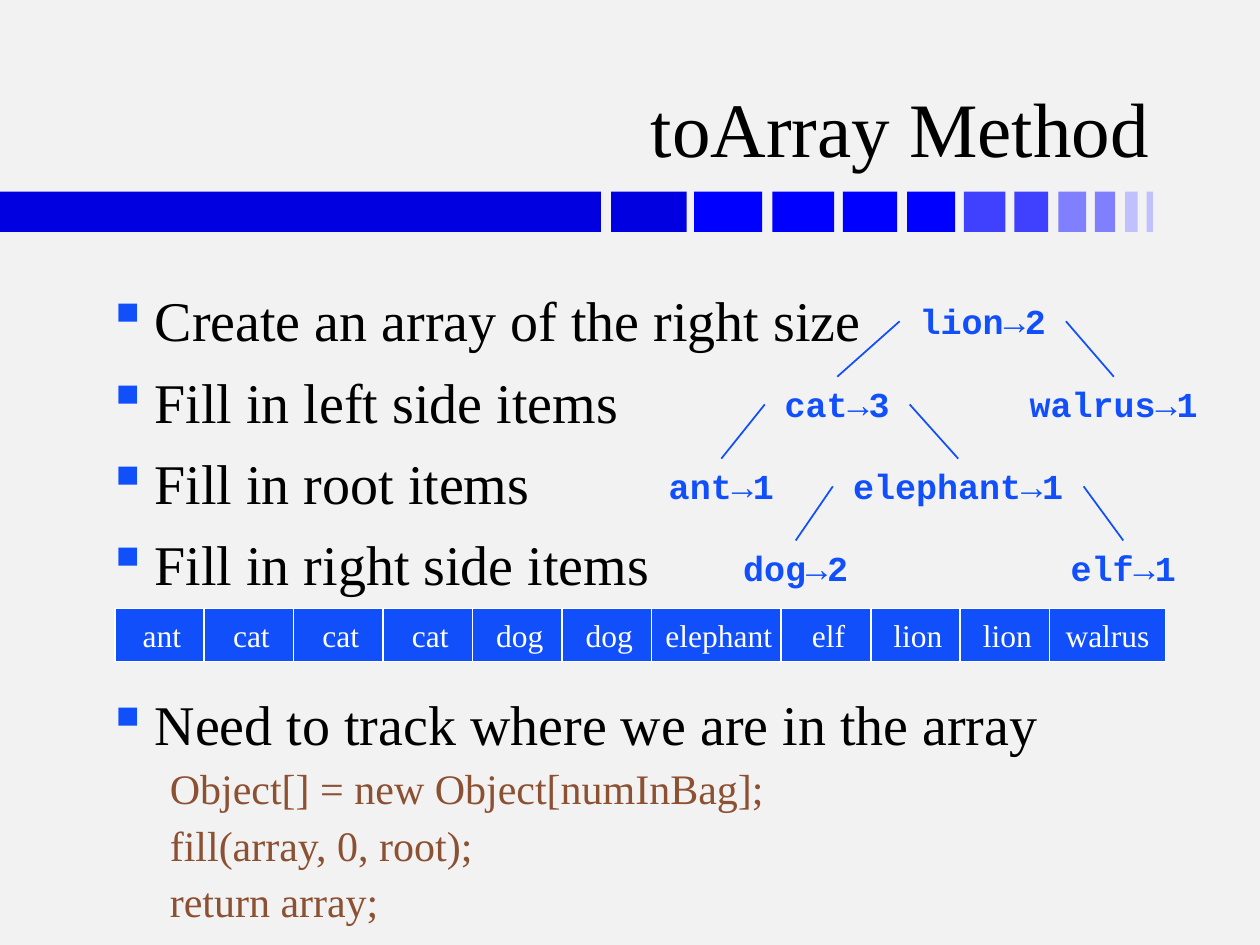
from lxml.etree import SubElement
from pptx import Presentation
from pptx.dml.color import RGBColor
from pptx.enum.shapes import MSO_CONNECTOR, MSO_SHAPE
from pptx.enum.text import MSO_ANCHOR, MSO_AUTO_SIZE, PP_ALIGN
from pptx.oxml.ns import qn
from pptx.util import Inches, Pt

THEME = {
    "background": RGBColor.from_string("F2F2F2"),
    "accent": RGBColor.from_string("114FFB"),
    "ink": RGBColor.from_string("000000"),
    "code": RGBColor.from_string("8C5032"),
    "white": RGBColor.from_string("FFFFFF"),
    "bars": [RGBColor.from_string(shade) for shade in ("0000E0", "0000FF", "4040FF", "8080FF", "C0C0FF")],
    "title": {"name": "Times New Roman", "size": Pt(44)},
    "bullet": {"name": "Times New Roman", "size": Pt(32)},
    "source": {"name": "Times New Roman", "size": Pt(24)},
    "node": {"name": "Courier New", "size": Pt(20), "bold": True},
    "cell": {"name": "Times New Roman", "size": Pt(18)},
}


def write(paragraph, text, style, color, **layout):
    run = paragraph.add_run()
    run.text = text
    run.font.color.rgb = color
    for target, values in ((run.font, THEME[style]), (paragraph, layout)):
        for attribute, value in values.items():
            setattr(target, attribute, value)


def add_box(left, top, width, height, color):
    box = slide.shapes.add_shape(
        MSO_SHAPE.RECTANGLE, Inches(left), Inches(top), Inches(width), Inches(height))
    box.shadow.inherit = False
    box.fill.solid()
    box.fill.fore_color.rgb = color
    box.line.fill.background()
    return box


deck = Presentation()
deck.slide_width, deck.slide_height = Inches(10), Inches(7.5)
slide = deck.slides.add_slide(deck.slide_layouts[6])
slide.background.fill.solid()
slide.background.fill.fore_color.rgb = THEME["background"]

bars = [
    (0, 4.77, 0), (4.85, 0.6, 0), (5.51, 0.54, 1), (6.13, 0.49, 1),
    (6.69, 0.43, 1), (7.2, 0.38, 1), (7.65, 0.33, 2), (8.05, 0.27, 2),
    (8.4, 0.22, 3), (8.69, 0.16, 3), (8.93, 0.1, 4), (9.1, 0.05, 4),
]
for left, width, shade in bars:
    add_box(left, 1.52, width, 0.32, THEME["bars"][shade])

title = slide.shapes.add_textbox(Inches(0.74), Inches(0.19), Inches(8.48), Inches(1.23)).text_frame
title.word_wrap = True
title.vertical_anchor = MSO_ANCHOR.BOTTOM
write(title.paragraphs[0], "toArray Method", "title", THEME["ink"], alignment=PP_ALIGN.RIGHT)

body = slide.shapes.add_textbox(Inches(0.75), Inches(2.17), Inches(8.5), Inches(4.5)).text_frame
body.word_wrap = True
body.margin_top = Inches(0.1)
bullets = [
    ("Create an array of the right size", 0),
    ("Fill in left side items", 8),
    ("Fill in root items", 8),
    ("Fill in right side items", 8),
    ("Need to track where we are in the array", 52.8),
]
for index, (text, gap) in enumerate(bullets):
    paragraph = body.add_paragraph() if index else body.paragraphs[0]
    properties = paragraph._p.get_or_add_pPr()
    properties.set("marL", str(Inches(0.38)))
    properties.set("indent", str(Inches(-0.38)))
    bullet_color = SubElement(properties, qn("a:buClr"))
    SubElement(bullet_color, qn("a:srgbClr"), val=str(THEME["accent"]))
    SubElement(properties, qn("a:buChar"), char="▪")
    write(paragraph, text, "bullet", THEME["ink"], space_before=Pt(gap))

for statement in ("Object[] = new Object[numInBag];", "fill(array, 0, root);", "return array;"):
    paragraph = body.add_paragraph()
    properties = paragraph._p.get_or_add_pPr()
    properties.set("marL", str(Inches(0.81)))
    properties.set("indent", str(Inches(-0.31)))
    SubElement(properties, qn("a:buNone"))
    write(paragraph, statement, "source", THEME["code"], level=1, space_before=Pt(3.5))

node_height = 0.44
nodes = {
    "lion→2": (7.14, 2.33, 1.32),
    "cat→3": (6.07, 2.99, 1.15),
    "walrus→1": (8.01, 2.99, 1.66),
    "elephant→1": (6.61, 3.64, 1.99),
    "dog→2": (5.74, 4.29, 1.15),
    "elf→1": (8.34, 4.29, 1.15),
    "ant→1": (5.15, 3.64, 1.15),
}
for label, (left, top, width) in nodes.items():
    node = slide.shapes.add_textbox(
        Inches(left), Inches(top), Inches(width), Inches(node_height)).text_frame
    node.word_wrap = False
    node.auto_size = MSO_AUTO_SIZE.SHAPE_TO_FIT_TEXT
    write(node.paragraphs[0], label, "node", THEME["accent"], alignment=PP_ALIGN.CENTER)

children = {
    "lion→2": ("cat→3", "walrus→1"),
    "cat→3": ("ant→1", "elephant→1"),
    "elephant→1": ("dog→2", "elf→1"),
}
for parent, pair in children.items():
    left, top, width = nodes[parent]
    for start, child in zip((left, left + width), pair):
        child_left, child_top, child_width = nodes[child]
        branch = slide.shapes.add_connector(
            MSO_CONNECTOR.STRAIGHT, Inches(start), Inches(top + node_height / 2),
            Inches(child_left + child_width / 2), Inches(child_top))
        branch.line.color.rgb = THEME["accent"]
        branch.line.width = Pt(1)
        SubElement(branch._element.spPr, qn("a:effectLst"))

items = ["ant", "cat", "cat", "cat", "dog", "dog", "elephant", "elf", "lion", "lion", "walrus"]
wide_cells = {"elephant": 1.07, "walrus": 0.92}
overlap = 0.04
left = 0.91
for item in items:
    width = wide_cells.get(item, 0.75)
    cell = add_box(left, 4.83, width, 0.42, THEME["accent"])
    cell.line.color.rgb = THEME["white"]
    cell.line.width = Pt(1)
    cell.text_frame.word_wrap = False
    write(cell.text_frame.paragraphs[0], item, "cell", THEME["white"], alignment=PP_ALIGN.CENTER)
    left += width - overlap

deck.save("out.pptx")
